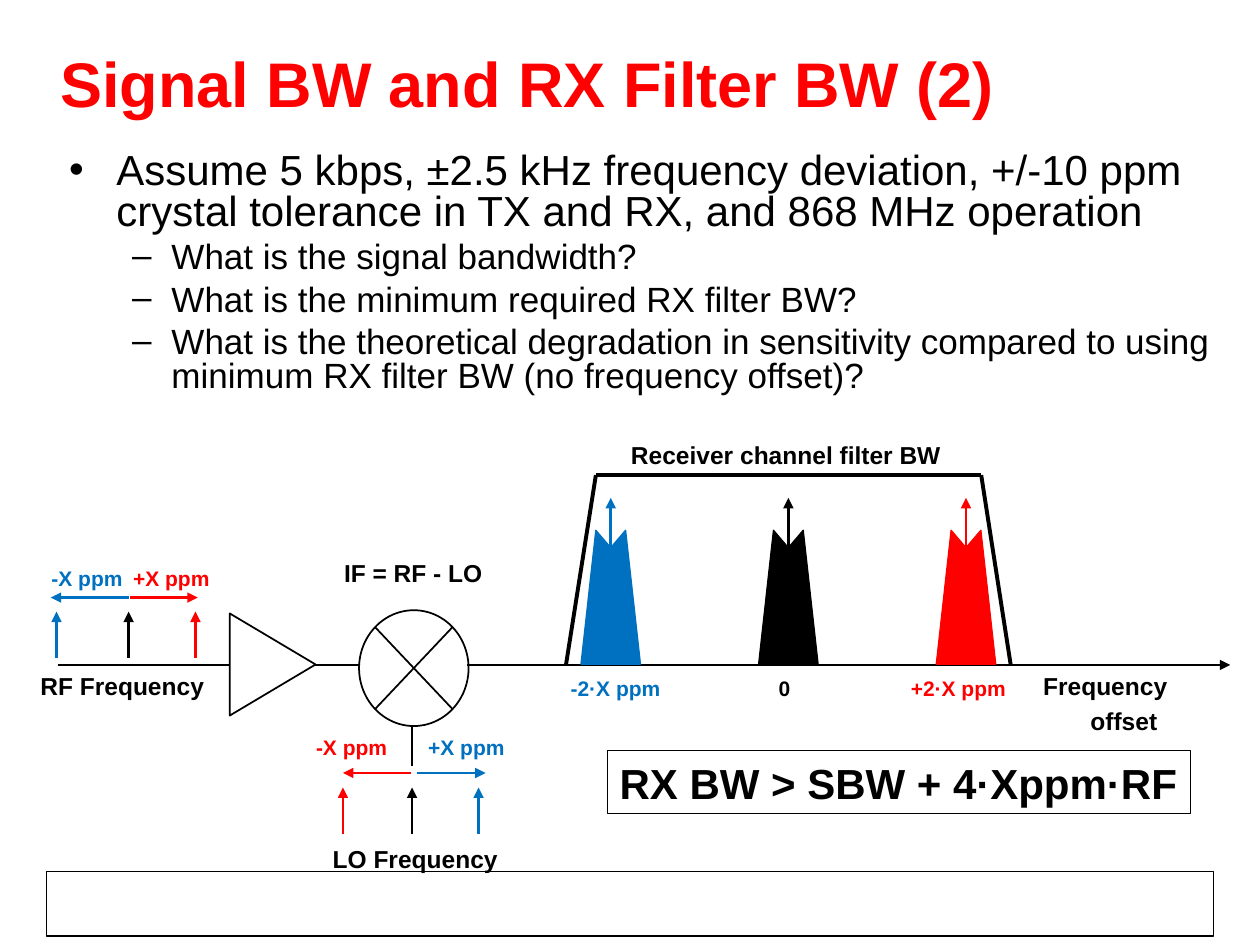
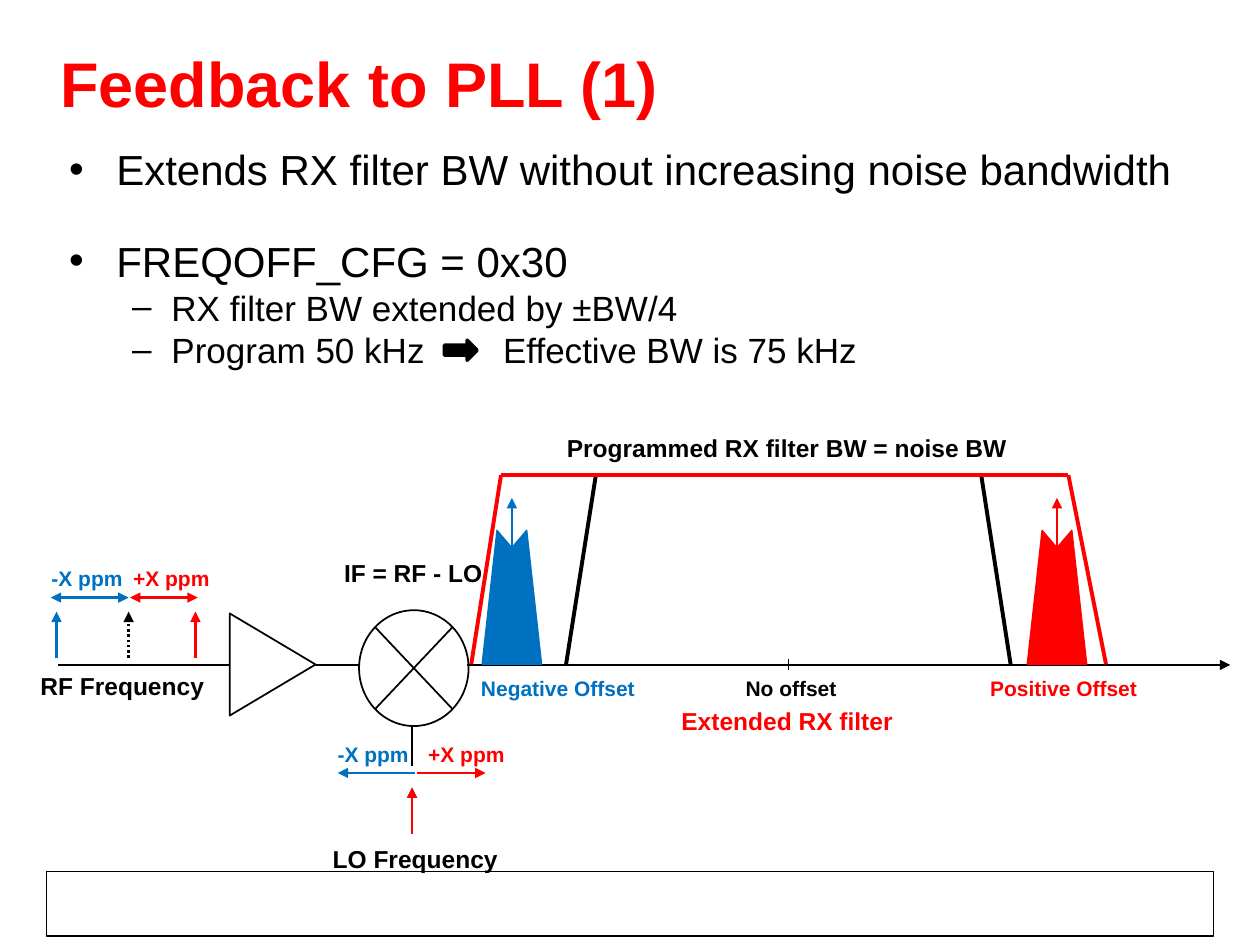
import pptx
import pptx.util
import pptx.dml.color
import pptx.enum.dml
import pptx.enum.shapes
import pptx.enum.text
import pptx.oxml
import pptx.oxml.ns
from lxml import etree

Pt = pptx.util.Pt
qn = pptx.oxml.ns.qn
MSO = pptx.enum.shapes.MSO_SHAPE
ANCHOR = pptx.enum.text.MSO_ANCHOR

COLORS = {"black": "000000", "red": "FF0000", "blue": "0070C0"}
FONT = "Arial"
AXIS_Y = 380      # frequency axis
BASE_Y = 379.5    # foot of filters and spectra
FILTER_Y = 271.5  # top of filters
LO_X = 235.5      # local oscillator feed
RF_X = 73.5       # nominal RF carrier


def add_xml(parent, tag, **attrs):
    el = etree.SubElement(parent, qn(tag))
    for name, value in attrs.items():
        el.set(name, str(value))
    return el


def rgb(color):
    return pptx.dml.color.RGBColor.from_string(COLORS[color])


class Deck:
    def __init__(self):
        self.prs = pptx.Presentation()
        self.prs.slide_width, self.prs.slide_height = Pt(720), Pt(540)
        self.slide = None

    def new_slide(self, title):
        self.slide = self.prs.slides.add_slide(self.prs.slide_layouts[6])
        self.shape(MSO.RECTANGLE, 26.6, 498.2, 666.7, 36.7, width=0.75)
        tf = self.frame(27.4, 0, 666, 93.6)
        tf.vertical_anchor = ANCHOR.MIDDLE
        self.put_text(tf.paragraphs[0], title, 36, "red", bold=True)

    def frame(self, x, y, w, h):
        tf = self.slide.shapes.add_textbox(Pt(x), Pt(y), Pt(w), Pt(h)).text_frame
        tf.word_wrap = True
        return tf

    def put_text(self, p, text, size, color="black", bold=False):
        p.text = text
        f = p.font
        f.size, f.name, f.bold = Pt(size), FONT, bold
        f.color.rgb = rgb(color)

    def indent(self, p, left, first):
        ppr = p._p.get_or_add_pPr()
        ppr.set("marL", str(Pt(left)))
        ppr.set("indent", str(Pt(first)))
        return ppr

    def body(self, items):
        """Items are (level, text, space before, tab position or None)."""
        tf = self.frame(32.4, 84.2, 666.7, 369.4)
        for i, (level, text, before, tab) in enumerate(items):
            p = tf.add_paragraph() if i else tf.paragraphs[0]
            p.level = level
            p.line_spacing = 0.8
            if i:
                p.space_before = Pt(before)
            ppr = self.indent(p, *((27, -27), (58.5, -22.5))[level])
            add_xml(ppr, "a:buFont", typeface=FONT)
            add_xml(ppr, "a:buChar", char="•–"[level])
            if tab:
                tabs = add_xml(ppr, "a:tabLst")
                add_xml(tabs, "a:tab", pos=Pt(tab), algn="l")
            self.put_text(p, text, (24, 20)[level])

    def label(self, text, x, y, w, color="black", size=14):
        tf = self.frame(x, y, w, 27 if size == 14 else 24)
        p = tf.paragraphs[0]
        p.line_spacing = 1.2
        self.indent(p, 27, -27)
        self.put_text(p, text, size, color, bold=True)

    def style(self, sp, color, width, fill=None):
        sp.shadow.inherit = False
        if fill:
            sp.fill.solid()
            sp.fill.fore_color.rgb = rgb(fill)
        else:
            sp.fill.background()
        sp.line.color.rgb = rgb(color)
        sp.line.width = Pt(width)

    def shape(self, kind, x, y, w, h, fill=None, width=1.0):
        sp = self.slide.shapes.add_shape(kind, Pt(x), Pt(y), Pt(w), Pt(h))
        self.style(sp, "black", width, fill)
        return sp

    def line(self, x1, y1, x2, y2, color="black", width=1.0, ends="", dash=None):
        """Ends names the arrowheads: "tail", "head tail" or none."""
        ln = self.slide.shapes.add_connector(
            pptx.enum.shapes.MSO_CONNECTOR.STRAIGHT, Pt(x1), Pt(y1), Pt(x2), Pt(y2))
        ln.line.color.rgb = rgb(color)
        ln.line.width = Pt(width)
        if dash:
            ln.line.dash_style = dash
        sppr = ln._element.spPr
        for end in ends.split():
            add_xml(sppr.find(qn("a:ln")), f"a:{end}End", type="triangle")
        add_xml(sppr, "a:effectLst")

    def arrow(self, x1, y1, x2, y2, color="black", ends="tail", dash=None):
        self.line(x1, y1, x2, y2, color, 1.5, ends, dash)

    def carrier(self, x, y, color="black", dash=None):
        self.arrow(x, y, x, y - 26.5, color, dash=dash)

    def spectrum(self, x, color):
        points = [(-17, BASE_Y), (-8.5, 303), (0, 313), (8.5, 303), (17, BASE_Y)]
        points = [(Pt(x + dx), Pt(y)) for dx, y in points]
        fb = self.slide.shapes.build_freeform(*points[0])
        fb.add_line_segments(points[1:], close=True)
        self.style(fb.convert_to_shape(), color, 0.75, color)
        self.arrow(x, BASE_Y, x, 284.5, color)

    def channel_filter(self, foot_l, top_l, top_r, foot_r, color="black"):
        corners = [(foot_l, BASE_Y), (top_l, FILTER_Y), (top_r, FILTER_Y), (foot_r, BASE_Y)]
        for a, b in zip(corners, corners[1:]):
            self.line(*a, *b, color, 2.25)

    def receiver(self, rf_ends="tail", rf_dash=None):
        # Signal chain: axis, amplifier, mixer, LO feed
        self.line(267, AXIS_Y, 703, AXIS_Y, ends="tail")
        self.line(33, AXIS_Y, 131, AXIS_Y)
        self.shape(MSO.ISOSCELES_TRIANGLE, 126.7, 355.2, 58.3, 49).rotation = 90
        self.line(180, AXIS_Y, 205, AXIS_Y)
        self.shape(MSO.FLOWCHART_SUMMING_JUNCTION, 205.2, 348.7, 62.6, 66.2)
        self.line(LO_X, 415.3, LO_X, 438)
        # RF tolerance
        self.carrier(RF_X, 376, dash=rf_dash)
        for text, color, text_x, x, start, end in (
                ("-X ppm", "blue", 22.3, 32.3, RF_X, 29),
                ("+X ppm", "red", 69, 111.7, 74.3, 113)):
            self.carrier(x, 376, color)
            self.arrow(start, 341.5, end, 341.5, color, rf_ends)
            self.label(text, text_x, 316.8, 74, color, 12)
        # Names
        self.label("LO Frequency", 183, 475.2, 142.5)
        self.label("RF Frequency", 16, 376.6, 142.5)
        self.label("IF = RF - LO", 189.5, 311.8, 142.5)

    def lo_offset(self, text, x, y, color, start, end):
        self.arrow(start, 441.7, end, 441.7, color)
        self.label(text, x, y, 74, color, 12)


def filter_bandwidth(deck):
    deck.new_slide("Signal BW and RX Filter BW (2)")
    deck.body([
        (0, "Assume 5 kbps, ±2.5 kHz frequency deviation, +/-10 ppm crystal "
            "tolerance in TX and RX, and 868 MHz operation", 0, None),
        (1, "What is the signal bandwidth?", 5, None),
        (1, "What is the minimum required RX filter BW?", 5, None),
        (1, "What is the theoretical degradation in sensitivity compared to "
            "using minimum RX filter BW (no frequency offset)?", 5, None)])
    deck.receiver()
    # LO tolerance
    deck.carrier(LO_X, 476.5)
    deck.carrier(273.5, 476.5, "blue")
    deck.carrier(196, 476.5, "red")
    deck.lo_offset("+X ppm", 237.6, 413.3, "blue", 238.5, 277.5)
    deck.lo_offset("-X ppm", 173.5, 413.3, "red", 235, 196)
    # Spectra inside the channel filter
    for i, color in enumerate(("blue", "black", "red")):
        deck.spectrum(349 + 101.5 * i, color)
    deck.channel_filter(323.5, 340.5, 560.7, 577.5)
    deck.label("Receiver channel filter BW", 353.5, 244.8, 194.5)
    deck.label("-2·X ppm", 319, 379.5, 126.7, "blue", 12)
    deck.label("0", 437.8, 379.5, 40, size=12)
    deck.label("+2·X ppm", 513.4, 379.5, 127.4, "red", 12)
    deck.label("Frequency offset", 589, 376.6, 115)
    # Formula
    tf = deck.shape(MSO.RECTANGLE, 347, 429, 333.4, 36, width=0.75).text_frame
    tf.word_wrap = False
    tf.vertical_anchor = ANCHOR.MIDDLE
    p = tf.paragraphs[0]
    p.alignment = pptx.enum.text.PP_ALIGN.LEFT
    deck.put_text(p, "RX BW > SBW + 4·Xppm·RF", 24, bold=True)


def pll_feedback(deck):
    deck.new_slide("Feedback to PLL (1)")
    deck.body([
        (0, "Extends RX filter BW without increasing noise bandwidth", 0, None),
        (0, "FREQOFF_CFG = 0x30", 29.3, None),
        (1, "RX filter BW extended by ±BW/4", 5, None),
        (1, "Program 50 kHz\tEffective BW is 75 kHz", 5, 248)])
    deck.shape(MSO.RIGHT_ARROW, 254, 194.4, 18.7, 11.5, "black", 2)
    deck.receiver("head tail", pptx.enum.dml.MSO_LINE.ROUND_DOT)
    # LO follows the offset
    deck.lo_offset("-X ppm", 185.8, 417.6, "blue", 237, 193)
    deck.lo_offset("+X ppm", 237.6, 417.6, "red", 238.5, 277.5)
    for color in ("blue", "red"):
        deck.carrier(LO_X, 476.5, color)
    # Spectra, programmed filter and extended filter
    deck.spectrum(292.5, "blue")
    deck.spectrum(604, "red")
    deck.channel_filter(323.5, 340.5, 560.7, 577.5)
    deck.channel_filter(269.3, 286.3, 610.5, 632, "red")
    deck.line(450.5, 376.5, 450.5, 383, width=0.75)
    deck.label("Programmed RX filter BW = noise BW", 316.8, 240.5, 267.5)
    deck.label("Negative Offset", 267.8, 379.5, 126.7, "blue", 12)
    deck.label("No offset", 419, 379.5, 75, size=12)
    deck.label("Positive Offset", 558.7, 379.5, 127.4, "red", 12)
    deck.label("Extended RX filter", 382.3, 396.7, 141.5, "red")


def main():
    deck = Deck()
    filter_bandwidth(deck)
    pll_feedback(deck)
    deck.prs.save("out.pptx")


if __name__ == "__main__":
    main()
